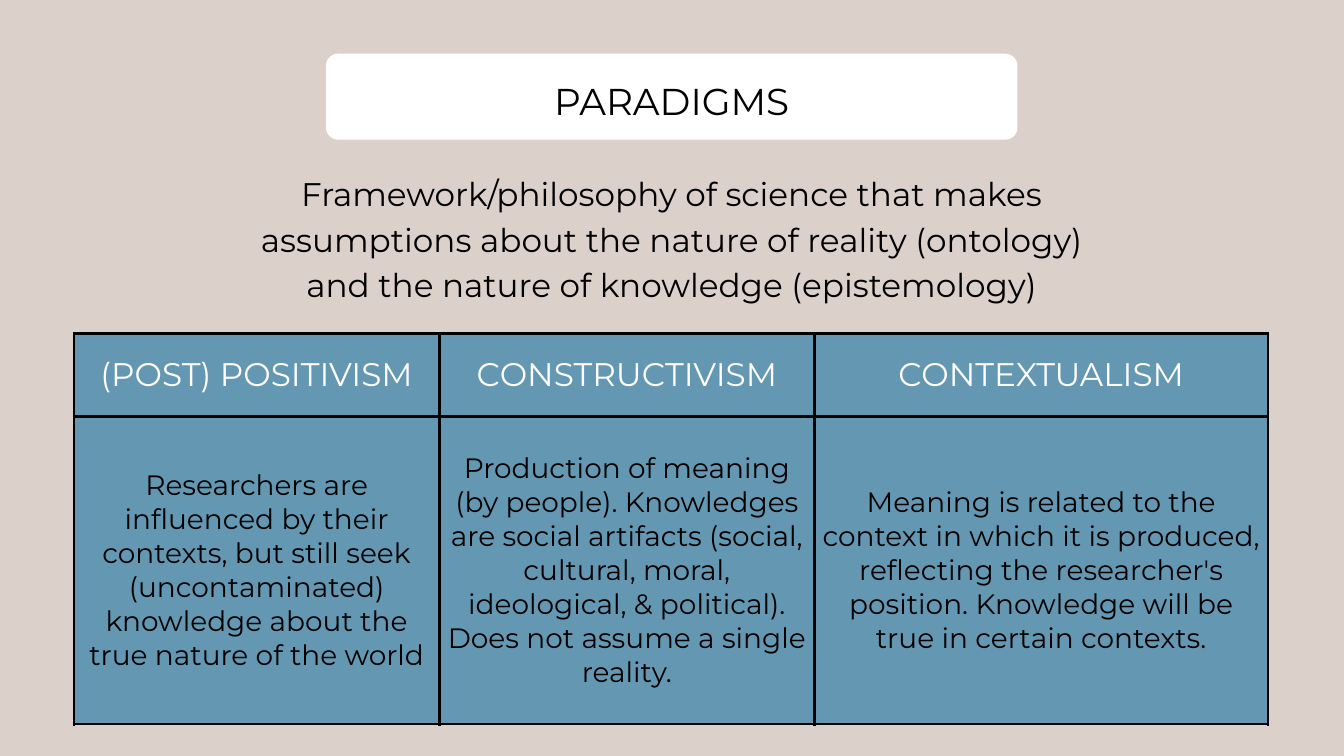
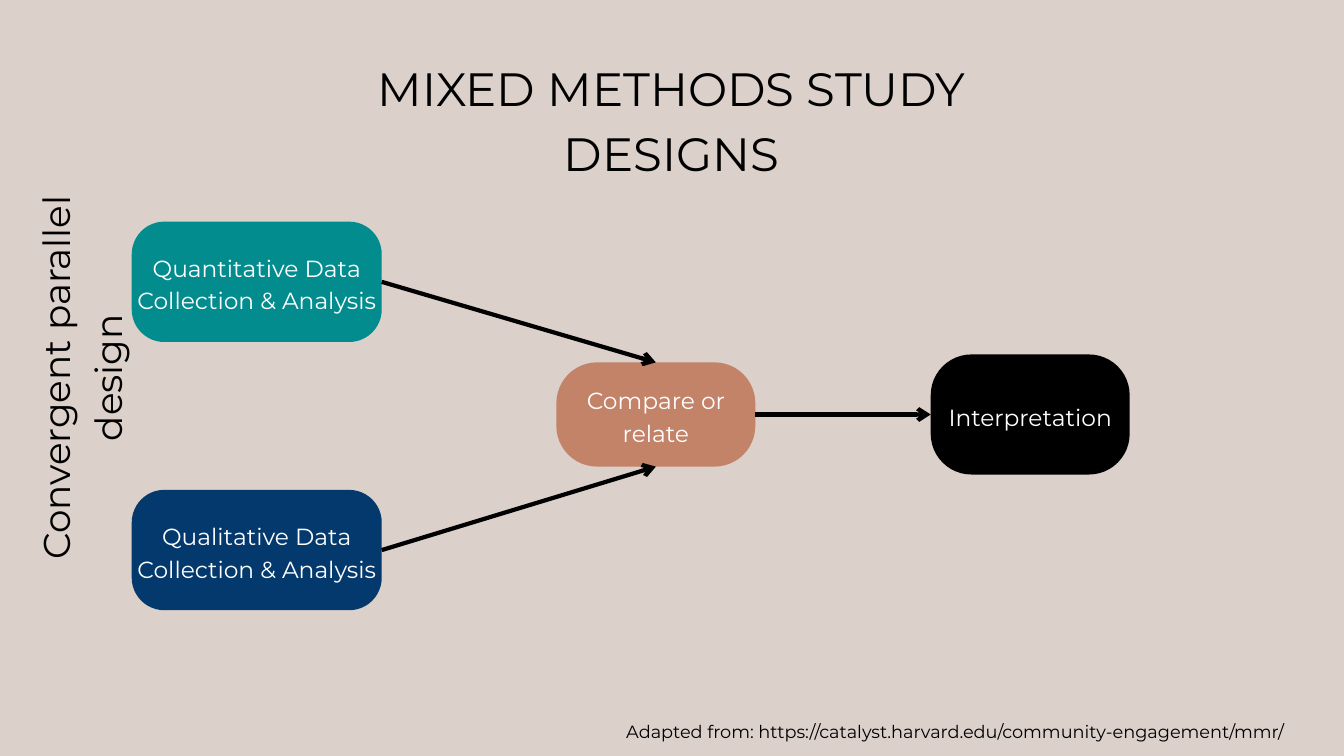
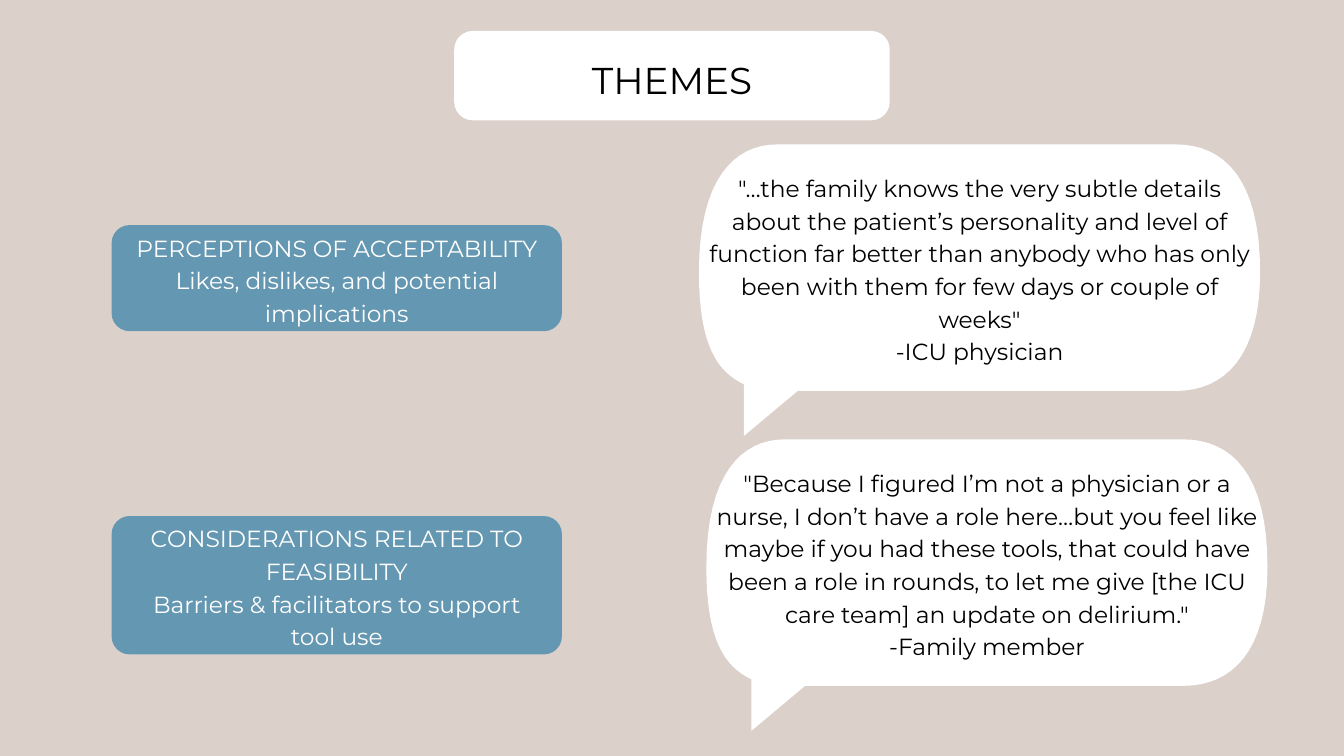
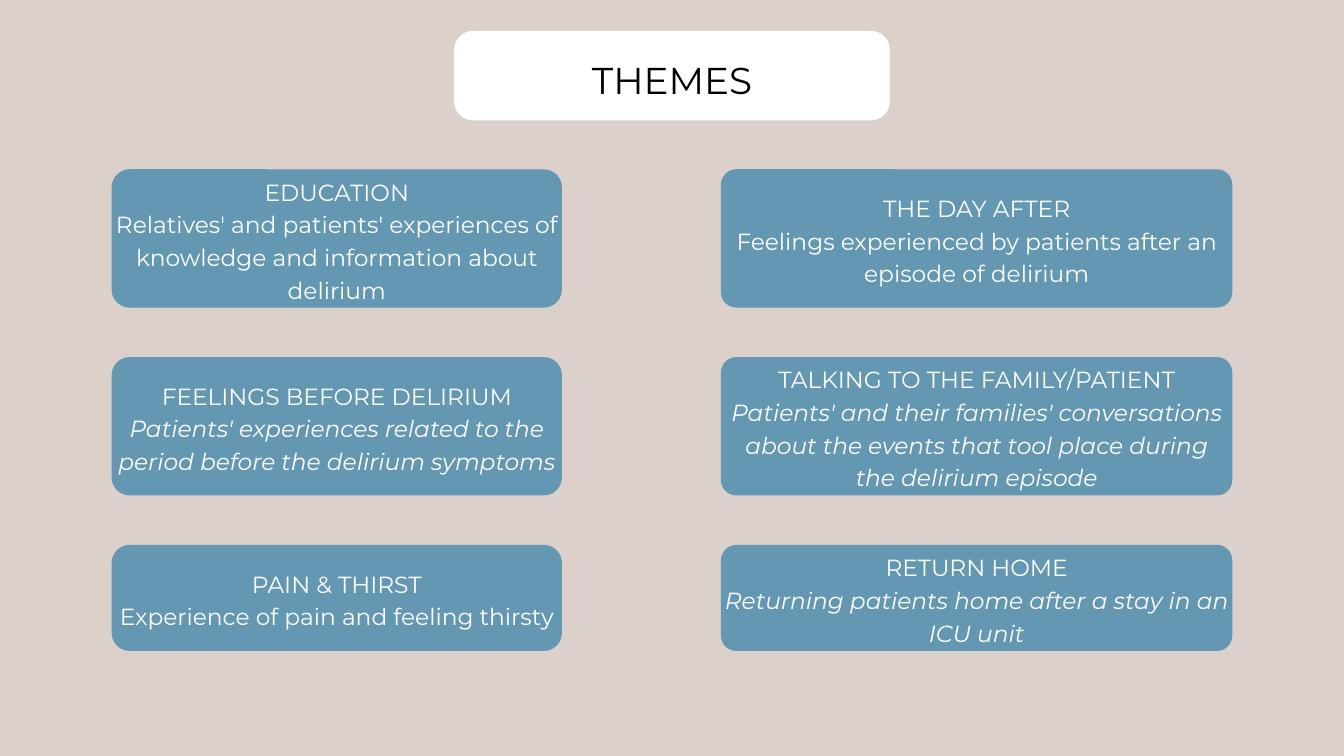
from dataclasses import dataclass
from itertools import product

from lxml.etree import SubElement
from pptx import Presentation
from pptx.dml.color import RGBColor
from pptx.enum.shapes import MSO_CONNECTOR, MSO_SHAPE
from pptx.enum.text import MSO_ANCHOR, MSO_AUTO_SIZE, PP_ALIGN
from pptx.oxml import parse_xml
from pptx.oxml.ns import nsdecls, qn
from pptx.util import Cm, Pt


@dataclass(frozen=True)
class Theme:
    """Colours, type sizes and line widths shared by all slides."""
    font: str = "Montserrat"
    sand: str = "DBD0CA"
    blue: str = "6497B1"
    teal: str = "028C8E"
    navy: str = "03396C"
    clay: str = "C38368"
    black: str = "000000"
    white: str = "FFFFFF"
    headline: int = 50
    title: int = 40
    lead: int = 35
    cell: int = 30
    body: int = 25
    source: int = 19
    leading: float = 1.4
    border: float = 3
    arrow: float = 4.5
    inset: float = 0.15


TOP, LEFT, BOTTOM, RIGHT = range(4)
BUBBLE_START = (18.01, 0)
BUBBLE_OUTLINE = [
    [(2.97, 0)],
    [(1.32, 0), (0, 1.32), (0, 4.83)],
    [(0, 7.59), (0.69, 8.59), (1.7, 9.07)],
    [(1.7, 11.02)],
    [(3.73, 9.32)],
    [(18.01, 9.32)],
    [(19.86, 9.32), (21.21, 8.03), (21.21, 4.83)],
    [(21.21, 1.32), (19.86, 0), BUBBLE_START],
]
BUBBLE_W, BUBBLE_H = 21.21, 9.3
CARD_X, CARD_W, CARD_RADIUS = 4.22, 17.02, 0.68
CARD_LOW, CARD_HIGH = 4.01, 5.23


def trace(start, segments, steps=16):
    """Return the points of an outline made of lines and cubic curves."""
    points = []
    for segment in segments:
        if len(segment) == 3:
            knots = [start, *segment]
            for i in range(1, steps + 1):
                t = i / steps
                weights = ((1 - t) ** 3, 3 * t * (1 - t) ** 2, 3 * t * t * (1 - t), t ** 3)
                points.append(tuple(sum(w * k[axis] for w, k in zip(weights, knots))
                                    for axis in (0, 1)))
        else:
            points += segment
        start = segment[-1]
    return points


class Deck:
    """Holds the theme and the current slide and draws each kind of element."""

    def __init__(self, prs, theme):
        """Start with a presentation and its theme."""
        self.prs, self.theme, self.s = prs, theme, None

    def add_slide(self):
        """Add a blank slide with the shared background."""
        self.s = self.prs.slides.add_slide(self.prs.slide_layouts[6])
        self.paint(self.s.background.fill, self.theme.sand)

    def paint(self, fill, color):
        """Give a fill one solid colour."""
        fill.solid()
        fill.fore_color.rgb = RGBColor.from_string(color)

    def paragraphs(self, tf, lines, size, color, align=PP_ALIGN.CENTER, italic=False,
                   leading=True):
        """Fill a text frame; italic applies to paragraphs after the first."""
        for i, line in enumerate(lines):
            p = tf.paragraphs[0] if i == 0 else tf.add_paragraph()
            p.alignment = align
            if leading:
                p.line_spacing = Pt(size * self.theme.leading)
            r = p.add_run()
            r.text = line
            style = {"name": self.theme.font, "size": Pt(size), "italic": italic and i > 0}
            for name, value in style.items():
                setattr(r.font, name, value)
            r.font.color.rgb = RGBColor.from_string(color)

    def text(self, box, lines, size, color, shapes=None, inset=0, rotation=0,
             align=PP_ALIGN.CENTER, italic=False):
        """Add a text box, growing on the slide or centred in a group."""
        sp = (shapes or self.s.shapes).add_textbox(*map(Cm, box))
        sp.rotation = rotation
        tf = sp.text_frame
        margins = dict.fromkeys(
            ("margin_left", "margin_top", "margin_right", "margin_bottom"), Cm(inset))
        layout = {"word_wrap": True,
                  "auto_size": MSO_AUTO_SIZE.NONE if shapes else MSO_AUTO_SIZE.SHAPE_TO_FIT_TEXT,
                  "vertical_anchor": MSO_ANCHOR.MIDDLE if shapes else MSO_ANCHOR.TOP}
        for name, value in {**margins, **layout}.items():
            setattr(tf, name, value)
        self.paragraphs(tf, lines, size, color, align, italic)

    def finish(self, sp, color):
        """Fill a shape and remove its line and shadow."""
        self.paint(sp.fill, color)
        sp.line.fill.background()
        sp.shadow.inherit = False

    def card(self, box, lines, fill, radius=CARD_RADIUS, size=None, color=None, italic=False):
        """Add a rounded panel with its text and return the panel."""
        shapes = self.s.shapes.add_group_shape().shapes
        sp = shapes.add_shape(MSO_SHAPE.ROUNDED_RECTANGLE, *map(Cm, box))
        sp.adjustments[0] = radius / min(box[2:])
        self.finish(sp, fill)
        self.text(box, lines, size or self.theme.body, color or self.theme.white,
                  shapes, self.theme.inset, italic=italic)
        return sp

    def title(self, text, box=(17.17, 1.17, 16.46, 3.38), radius=0.7):
        """Add the white title panel."""
        self.card(box, [text], self.theme.white, radius, self.theme.title, self.theme.black)

    def bubble(self, x, y, lines):
        """Add a speech bubble with a quotation."""
        shapes = self.s.shapes.add_group_shape().shapes
        place = lambda point: (Cm(x + point[0]), Cm(y + point[1]))
        builder = shapes.build_freeform(*place(BUBBLE_START))
        builder.add_line_segments([place(pt) for pt in trace(BUBBLE_START, BUBBLE_OUTLINE)])
        self.finish(builder.convert_to_shape(), self.theme.white)
        self.text((x, y, BUBBLE_W, BUBBLE_H), lines, self.theme.body, self.theme.black,
                  shapes, self.theme.inset)

    def arrow(self, start, start_side, end, end_side):
        """Join two panels with an arrow."""
        cxn = self.s.shapes.add_connector(MSO_CONNECTOR.STRAIGHT, 0, 0, 0, 0)
        cxn.begin_connect(start, start_side)
        cxn.end_connect(end, end_side)
        cxn.line.width = Pt(self.theme.arrow)
        cxn.line.color.rgb = RGBColor.from_string(self.theme.black)
        props = cxn._element.spPr
        SubElement(props.find(qn("a:ln")), qn("a:tailEnd"), type="arrow")
        SubElement(props, qn("a:effectLst"))

    def table(self, x, y, widths, heights, rows):
        """Add a bordered table whose first row is the header."""
        t = self.theme
        frame = self.s.shapes.add_table(len(rows), len(widths), Cm(x), Cm(y),
                                        Cm(sum(widths)), Cm(sum(heights)))
        table = frame.table
        table.first_row = table.horz_banding = False
        for column, width in zip(table.columns, widths):
            column.width = Cm(width)
        for row, height in zip(table.rows, heights):
            row.height = Cm(height)
        for i, j in product(range(len(rows)), range(len(widths))):
            cell = table.cell(i, j)
            cell.vertical_anchor = MSO_ANCHOR.MIDDLE
            self.paint(cell.fill, t.blue)
            size, color = (t.cell, t.black) if i else (t.lead, t.white)
            self.paragraphs(cell.text_frame, [rows[i][j]], size, color, leading=False)
            self.border(cell)

    def border(self, cell):
        """Draw the four borders of a table cell."""
        props = cell._tc.get_or_add_tcPr()
        for i, side in enumerate("LRTB"):
            props.insert(i, parse_xml(
                f'<a:ln{side} {nsdecls("a")} w="{Pt(self.theme.border)}"><a:solidFill>'
                f'<a:srgbClr val="{self.theme.black}"/></a:solidFill></a:ln{side}>'))


def paradigms(deck):
    """Build the slide on paradigms."""
    t = deck.theme
    deck.add_slide()
    deck.title("PARADIGMS", (12.32, 2.03, 26.14, 3.25), 0.46)
    deck.table(2.79, 12.6, (13.82, 14.17, 17.15), (3.15, 11.63), [
        ["(POST) POSITIVISM", "CONSTRUCTIVISM", "CONTEXTUALISM"],
        ["Researchers are influenced by their contexts, but still seek (uncontaminated) "
         "knowledge about the true nature of the world",
         "Production of meaning (by people). Knowledges are social artifacts (social, cultural, "
         "moral, ideological, & political). Does not assume a single reality.",
         "Meaning is related to the context in which it is produced, reflecting the "
         "researcher's position. Knowledge will be true in certain contexts."]])
    deck.text((9.68, 6.32, 31.42, 5.23),
              ["Framework/philosophy of science that makes assumptions about the nature of "
               "reality (ontology) and the nature of knowledge (epistemology)"],
              t.lead, t.black)


def study_designs(deck):
    """Build the flow of the convergent parallel design."""
    t = deck.theme
    deck.add_slide()
    quantitative, qualitative = [
        deck.card((4.98, y, 9.45, 4.55), [f"{kind} Data Collection & Analysis"], fill, 1.23)
        for y, kind, fill in ((8.38, "Quantitative", t.teal), (18.52, "Qualitative", t.navy))]
    compare = deck.card((21.03, 13.7, 7.52, 3.94), ["Compare or relate"], t.clay, 1.54)
    interpretation = deck.card((35.18, 13.4, 7.52, 4.54), ["Interpretation"], t.black, 1.54)
    deck.arrow(quantitative, RIGHT, compare, TOP)
    deck.arrow(qualitative, RIGHT, compare, BOTTOM)
    deck.arrow(compare, RIGHT, interpretation, LEFT)
    deck.text((23.67, 27.13, 26.54, 0.89),
              ["Adapted from: https://catalyst.harvard.edu/community-engagement/mmr/"],
              t.source, t.black, align=PP_ALIGN.LEFT)
    deck.text((-7.52, 13.34, 18.85, 1.88), ["Convergent parallel design"],
              t.title, t.black, rotation=270)
    deck.text((10.1, 1.9, 30.56, 2.39), ["MIXED METHODS STUDY DESIGNS"], t.headline, t.black)


def quoted_themes(deck):
    """Build the themes with quotations."""
    deck.add_slide()
    deck.title("THEMES")
    for y, height, lines in (
            (8.51, CARD_LOW, ["PERCEPTIONS OF ACCEPTABILITY",
                              "Likes, dislikes, and potential implications"]),
            (19.51, CARD_HIGH, ["CONSIDERATIONS RELATED TO FEASIBILITY",
                                "Barriers & facilitators to support", "tool use"])):
        deck.card((CARD_X, y, CARD_W, height), lines, deck.theme.blue)
    deck.bubble(26.42, 5.46, [
        "\"…the family knows the very subtle details about the patient’s personality and level "
        "of function far better than anybody who has only been with them for few days or couple "
        "of weeks\"", "-ICU physician"])
    deck.bubble(26.7, 16.61, [
        "\"Because I figured I’m not a physician or a nurse, I don’t have a role here…but you "
        "feel like maybe if you had these tools, that could have been a role in rounds, to let "
        "me give [the ICU care team] an update on delirium.\"", "-Family member"])


def theme_grid(deck):
    """Build the grid of six themes."""
    deck.add_slide()
    deck.title("THEMES")
    columns = [
        (CARD_X, CARD_W, CARD_RADIUS, [
            ("EDUCATION", "Relatives' and patients' experiences of knowledge and information "
                          "about delirium", False),
            ("FEELINGS BEFORE DELIRIUM", "Patients' experiences related to the period before "
                                         "the delirium symptoms", True),
            ("PAIN & THIRST", "Experience of pain and feeling thirsty", False)]),
        (27.25, 19.33, 0.58, [
            ("THE DAY AFTER", "Feelings experienced by patients after an episode of delirium",
             False),
            ("TALKING TO THE FAMILY/PATIENT", "Patients' and their families' conversations about "
             "the events that tool place during the delirium episode", True),
            ("RETURN HOME", "Returning patients home after a stay in an ICU unit", True)])]
    heights = (CARD_HIGH, CARD_HIGH, CARD_LOW)
    for x, width, radius, themes in columns:
        for row, (heading, body, italic) in enumerate(themes):
            deck.card((x, 6.4 + 7.1 * row, width, heights[row]), [heading, body],
                      deck.theme.blue, radius, italic=italic)


def main():
    """Build and save the presentation."""
    prs = Presentation()
    prs.slide_width, prs.slide_height = Cm(50.8), Cm(28.58)
    deck = Deck(prs, Theme())
    for build in (paradigms, study_designs, quoted_themes, theme_grid):
        build(deck)
    prs.save("out.pptx")


if __name__ == "__main__":
    main()
